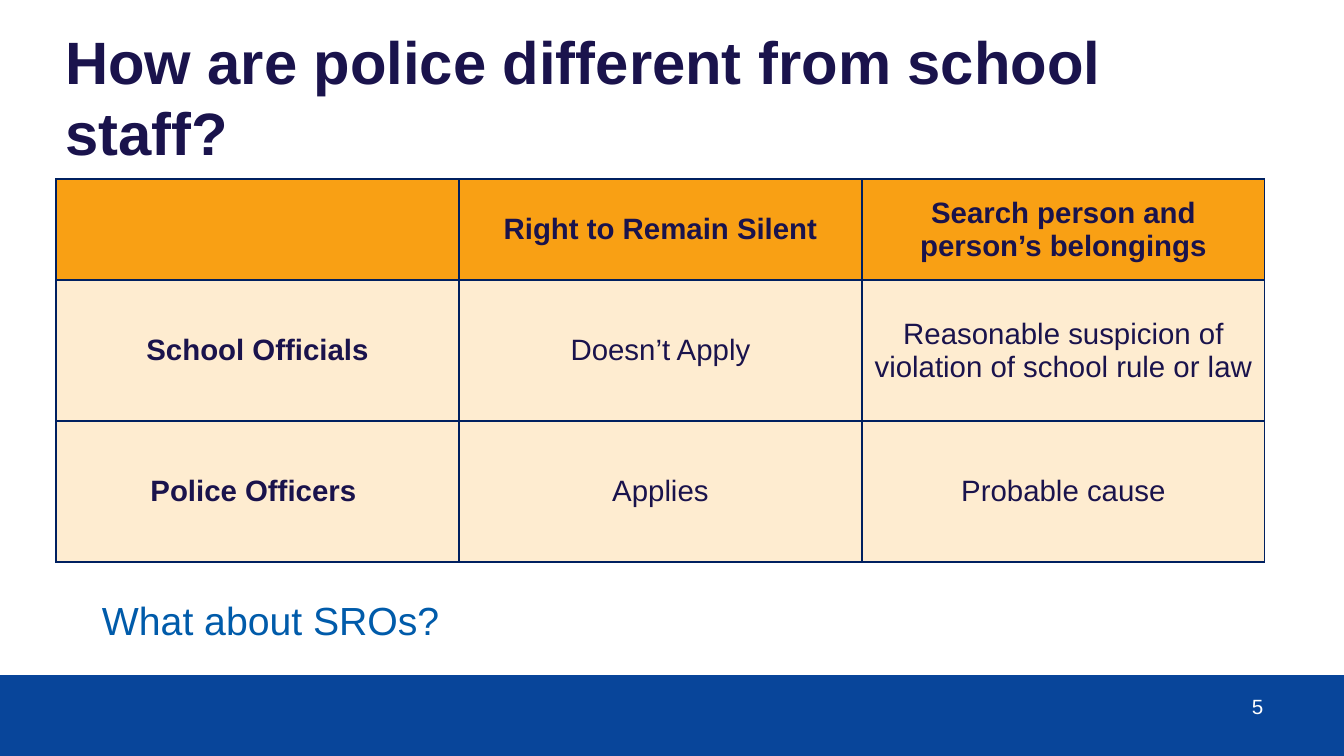
import pptx
import pptx.util
import pptx.dml.color
import pptx.enum.shapes
import pptx.enum.text
import pptx.oxml

RGB = pptx.dml.color.RGBColor
NAVY = RGB(0x1A, 0x13, 0x4C)
BLUE = RGB(0x00, 0x5B, 0xAA)
BAND = RGB(0x08, 0x45, 0x9A)
ORANGE = RGB(0xF9, 0xA0, 0x14)
CREAM = RGB(0xFE, 0xEC, 0xD0)
WHITE = RGB(0xFF, 0xFF, 0xFF)
BORDER = RGB(0x00, 0x20, 0x60)

FONT = "Arial"
MIDDLE = pptx.enum.text.MSO_ANCHOR.MIDDLE
TOP = pptx.enum.text.MSO_ANCHOR.TOP

TEXTS = [
    dict(text="5", box=(1240, 688, 59, 37), inset=(12, 6), anchor=TOP,
         size=14.7, color=WHITE, bold=False),
    dict(text="How are police different from school staff?",
         box=(56, 33, 1221, 126), inset=(9, 4), anchor=MIDDLE,
         size=42.7, color=NAVY, bold=True),
    dict(text="What about SROs?", box=(68, 592, 1209, 58), inset=(34, 4),
         anchor=TOP, size=28, color=BLUE, bold=False),
]
ROWS = [
    ("", "Right to Remain Silent", "Search person and person’s belongings"),
    ("School Officials", "Doesn’t Apply",
     "Reasonable suspicion of violation of school rule or law"),
    ("Police Officers ", "Applies", "Probable cause"),
]
TABLE_LEFT, TABLE_TOP, COL_WIDTH = 56, 179, 403
ROW_HEIGHTS = (101, 141, 141)


def px(n):
    return pptx.util.Emu(round(n * 914400 / 100.8))


def set_font(p, size, color, bold):
    p.font.name = FONT
    p.font.size = pptx.util.Pt(size)
    p.font.color.rgb = color
    p.font.bold = bold


def add_text(slide, text, box, inset, anchor, size, color, bold):
    tf = slide.shapes.add_textbox(*map(px, box)).text_frame
    tf.word_wrap = True
    tf.vertical_anchor = anchor
    tf.margin_left = tf.margin_right = px(inset[0])
    tf.margin_top = tf.margin_bottom = px(inset[1])
    p = tf.paragraphs[0]
    p.text = text
    set_font(p, size, color, bold)


def add_borders(cell):
    tcPr = cell._tc.get_or_add_tcPr()
    for i, side in enumerate(("lnL", "lnR", "lnT", "lnB")):
        tcPr.insert(i, pptx.oxml.parse_xml(
            f'<a:{side} xmlns:a="http://schemas.openxmlformats.org/drawingml/2006/main" '
            f'w="12700"><a:solidFill><a:srgbClr val="{BORDER}"/></a:solidFill></a:{side}>'))


def add_rights_table(slide):
    cols = len(ROWS[0])
    frame = slide.shapes.add_table(
        len(ROWS), cols, px(TABLE_LEFT), px(TABLE_TOP),
        px(COL_WIDTH * cols), px(sum(ROW_HEIGHTS)))
    table = frame.table
    for col in table.columns:
        col.width = px(COL_WIDTH)
    for i, (texts, height) in enumerate(zip(ROWS, ROW_HEIGHTS)):
        table.rows[i].height = px(height)
        for j, text in enumerate(texts):
            cell = table.cell(i, j)
            cell.fill.solid()
            cell.fill.fore_color.rgb = CREAM if i else ORANGE
            cell.vertical_anchor = MIDDLE
            add_borders(cell)
            p = cell.text_frame.paragraphs[0]
            p.text = text
            p.alignment = pptx.enum.text.PP_ALIGN.CENTER
            set_font(p, 21, NAVY, i == 0 or j == 0)


def main():
    prs = pptx.Presentation()
    prs.slide_width, prs.slide_height = px(1344), px(756)
    slide = prs.slides.add_slide(prs.slide_layouts[6])
    band = slide.shapes.add_shape(
        pptx.enum.shapes.MSO_SHAPE.RECTANGLE, 0, px(675), px(1344), px(81))
    band.shadow.inherit = False
    band.fill.solid()
    band.fill.fore_color.rgb = BAND
    band.line.fill.background()
    for item in TEXTS:
        add_text(slide, **item)
    add_rights_table(slide)
    prs.save("out.pptx")


if __name__ == "__main__":
    main()
